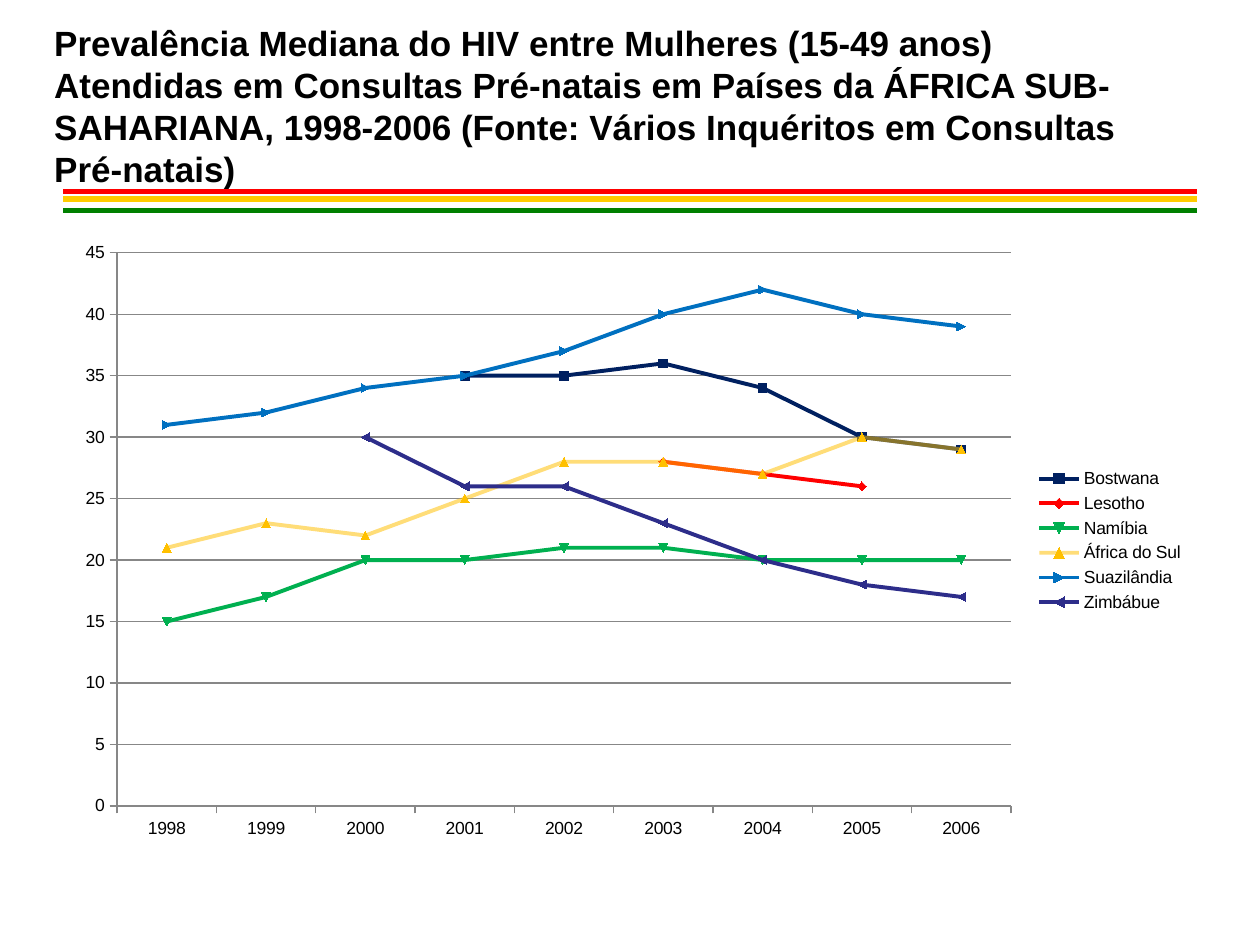
from lxml import etree
from pptx import Presentation
from pptx.chart.data import CategoryChartData
from pptx.dml.color import RGBColor
from pptx.enum.chart import XL_CHART_TYPE, XL_LEGEND_POSITION, XL_TICK_MARK
from pptx.enum.shapes import MSO_CONNECTOR
from pptx.enum.text import MSO_ANCHOR, MSO_AUTO_SIZE, PP_ALIGN
from pptx.oxml.ns import qn
from pptx.util import Inches, Pt

LINE_MARKERS = XL_CHART_TYPE.LINE_MARKERS
LEGEND_RIGHT = XL_LEGEND_POSITION.RIGHT
TICK_OUTSIDE = XL_TICK_MARK.OUTSIDE
STRAIGHT = MSO_CONNECTOR.STRAIGHT
MIDDLE = MSO_ANCHOR.MIDDLE
NO_AUTOFIT = MSO_AUTO_SIZE.NONE
LEFT = PP_ALIGN.LEFT

FONT = "Arial"
COLORS = {
    "text": "000000", "axis": "878787",
    "red": "FF0000", "yellow": "FFCC00", "green": "008000",
    "Bostwana": "002060", "Lesotho": "FF0000", "Namíbia": "00B050",
    "África do Sul": "FFC000", "Suazilândia": "0070C0", "Zimbábue": "2D2D8A",
}
TITLE = ("Prevalência Mediana do HIV entre Mulheres (15-49 anos)\v"
         "Atendidas em Consultas Pré-natais em Países da ÁFRICA SUB-SAHARIANA, "
         "1998-2006 (Fonte: Vários Inquéritos em Consultas\vPré-natais)")
YEARS = [str(year) for year in range(1998, 2007)]
PREVALENCE = {
    "Bostwana": [None, None, None, 35, 35, 36, 34, 30, 29],
    "Lesotho": [None, None, None, None, None, 28, 27, 26, None],
    "Namíbia": [15, 17, 20, 20, 21, 21, 20, 20, 20],
    "África do Sul": [21, 23, 22, 25, 28, 28, 27, 30, 29],
    "Suazilândia": [31, 32, 34, 35, 37, 40, 42, 40, 39],
    "Zimbábue": [None, None, 30, 26, 26, 23, 20, 18, 17],
}
LINE_OPACITY = {"África do Sul": 52}


def color(name):
    return RGBColor.from_string(COLORS[name])


def style_line(line, name, width):
    line.color.rgb = color(name)
    line.width = Pt(width)


def place_title(page, left, top, width, height):
    title = page.shapes.title
    title.left, title.top, title.width, title.height = left, top, width, height
    frame = title.text_frame
    frame.text = TITLE
    frame.word_wrap = True
    frame.auto_size = NO_AUTOFIT
    frame.vertical_anchor = MIDDLE
    para = frame.paragraphs[0]
    para.alignment = LEFT
    para.line_spacing = 1.0
    para.space_before = Pt(0)
    para.font.name = FONT
    para.font.size = Pt(20)
    para.font.bold = True
    para.font.color.rgb = color("text")


def add_rules(page, left, top, width):
    """Draw the three coloured rules under the title."""
    for name, offset in (("yellow", 0.06), ("red", 0), ("green", 0.15)):
        y = top + Inches(offset)
        rule = page.shapes.add_connector(STRAIGHT, left, y, left + width, y)
        style_line(rule.line, name, 3)
        etree.SubElement(rule._element.spPr, qn("a:effectLst"))


def style_series(series):
    name = series.name
    series.smooth = False
    style_line(series.format.line, name, 2.25)
    series.marker.size = 5
    series.marker.format.fill.solid()
    series.marker.format.fill.fore_color.rgb = color(name)
    style_line(series.marker.format.line, name, 0.75)
    if name in LINE_OPACITY:
        stroke = series.format.line._ln.find(".//" + qn("a:srgbClr"))
        alpha = etree.SubElement(stroke, qn("a:alpha"))
        alpha.set("val", str(LINE_OPACITY[name] * 1000))


def add_prevalence_chart(page, left, top, width, height):
    data = CategoryChartData(number_format="General")
    data.categories = YEARS
    for country, values in PREVALENCE.items():
        data.add_series(country, values)
    chart = page.shapes.add_chart(LINE_MARKERS, left, top, width, height, data).chart
    chart.has_title = False
    chart.font.name = FONT
    chart.font.size = Pt(10)
    chart.font.color.rgb = color("text")
    chart.has_legend = True
    chart.legend.position = LEGEND_RIGHT
    chart.legend.include_in_layout = False

    for axis in (chart.category_axis, chart.value_axis):
        axis.major_tick_mark = TICK_OUTSIDE
        style_line(axis.format.line, "axis", 0.75)
    value_axis = chart.value_axis
    value_axis.minimum_scale, value_axis.maximum_scale = 0, 45
    value_axis.major_unit = 5
    value_axis.has_major_gridlines = True
    style_line(value_axis.major_gridlines.format.line, "axis", 0.75)

    chart.plots[0].vary_by_categories = False
    for series in chart.plots[0].series:
        style_series(series)


def main():
    deck = Presentation()
    deck.slide_width, deck.slide_height = Inches(10), Inches(7.5)
    page = deck.slides.add_slide(deck.slide_layouts[5])
    add_rules(page, Inches(0.5), Inches(1.52), Inches(9))
    place_title(page, Inches(0.33), Inches(0), Inches(9.5), Inches(1.67))
    add_prevalence_chart(page, Inches(0.5), Inches(1.83), Inches(9), Inches(4.92))
    deck.save("out.pptx")


if __name__ == "__main__":
    main()
